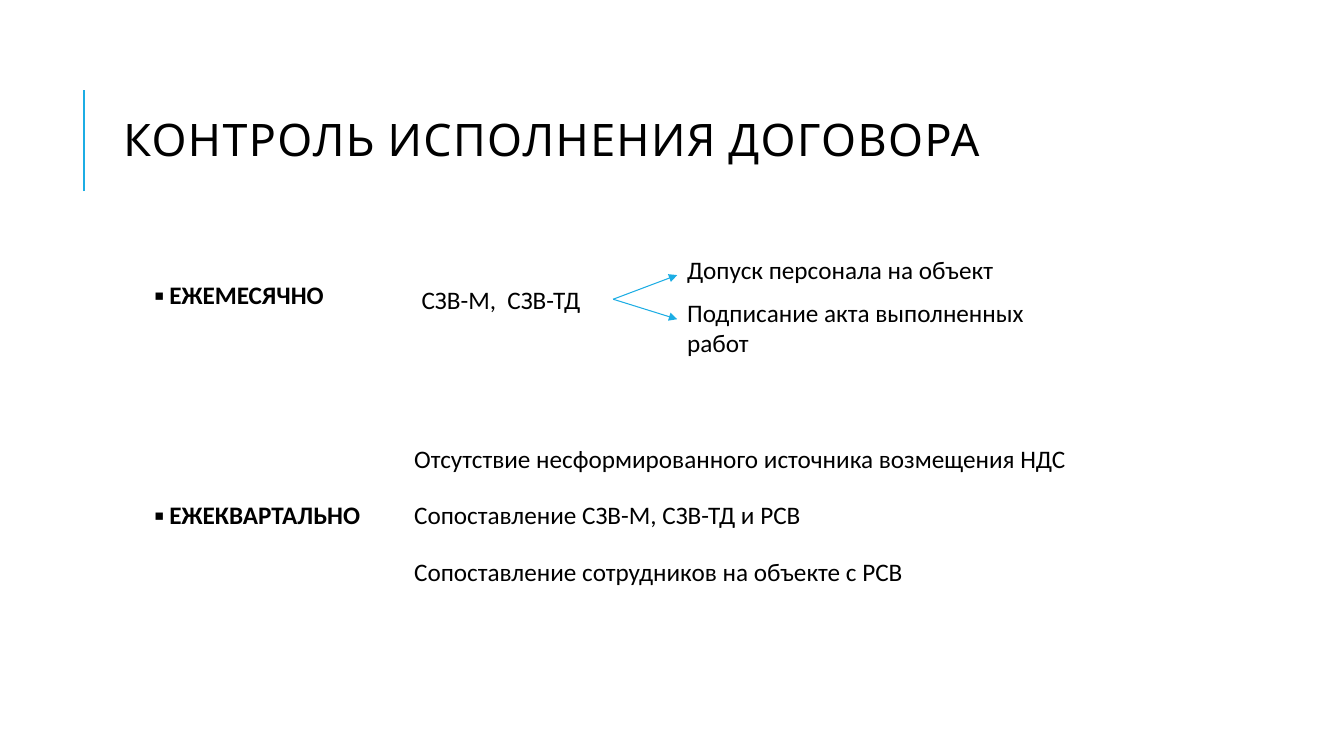
"""Build the slide on checking that a contract is carried out."""
import dataclasses

import lxml.etree
import pptx
import pptx.dml.color
import pptx.enum.shapes
import pptx.enum.text
import pptx.oxml.ns
import pptx.util

SCALE = 9525


@dataclasses.dataclass(frozen=True)
class Theme:
    """Hold colours, fonts and type sizes."""
    ink: str = "000000"
    accent: str = "1CADE4"
    paper: str = "FFFFFF"
    head_font: str = "Cabin"
    body_font: str = "Calibri"
    head_size: int = 32
    body_size: int = 18


THEME = Theme()


def px(count):
    """Turn pixels into EMU."""
    return pptx.util.Emu(count * SCALE)


def rgb(code):
    """Turn a hex code into a colour."""
    return pptx.dml.color.RGBColor.from_string(code)


def add_text(slide, text, left, top, width, height=38, bold=False):
    """Add a body text box and return it."""
    box = slide.shapes.add_textbox(px(left), px(top), px(width), px(height))
    frame = box.text_frame
    frame.word_wrap = True
    frame.text = text
    font = frame.paragraphs[0].runs[0].font
    font.name = THEME.body_font
    font.size = pptx.util.Pt(THEME.body_size)
    font.bold = bold
    font.color.rgb = rgb(THEME.ink)
    return box


def add_title(slide, text, left, top, width, height):
    """Add the spaced title in the head font."""
    frame = add_text(slide, text, left, top, width, height).text_frame
    frame.vertical_anchor = pptx.enum.text.MSO_ANCHOR.MIDDLE
    line = frame.paragraphs[0]
    line.line_spacing = 0.8
    font = line.runs[0].font
    font.name = THEME.head_font
    font.size = pptx.util.Pt(THEME.head_size)
    line.runs[0]._r.get_or_add_rPr().set("spc", "100")


def add_line(slide, start, end, weight, arrow=False):
    """Add a straight line, with an arrowhead at its end if asked."""
    line = slide.shapes.add_connector(
        pptx.enum.shapes.MSO_CONNECTOR.STRAIGHT,
        px(start[0]), px(start[1]), px(end[0]), px(end[1]))
    line.line.color.rgb = rgb(THEME.accent)
    line.line.width = pptx.util.Pt(weight)
    name = pptx.oxml.ns.qn
    if arrow:
        stroke = line.line._get_or_add_ln()
        lxml.etree.SubElement(stroke, name("a:tailEnd"), type="triangle")
    lxml.etree.SubElement(line._element.spPr, name("a:effectLst"))
    return line


def add_month(slide):
    """Add the monthly checks with arrows to their results."""
    add_text(slide, "▪ ЕЖЕМЕСЯЧНО", 138, 261, 234, bold=True)
    add_text(slide, "СЗВ-М,  СЗВ-ТД", 392, 266, 180)
    add_text(slide, "Допуск персонала на объект", 645, 237, 385)
    add_text(slide, "Подписание акта выполненных работ", 645, 278, 385, 68)
    for level in (262, 304):
        add_line(slide, (584, 285), (645, level), 0.75, arrow=True)


def add_quarter(slide):
    """Add the quarterly checks in evenly spaced rows."""
    add_text(slide, "▪ ЕЖЕКВАРТАЛЬНО", 138, 471, 234, bold=True)
    checks = (
        ("Отсутствие несформированного источника возмещения НДС", 660),
        ("Сопоставление СЗВ-М, СЗВ-ТД и РСВ", 446),
        ("Сопоставление сотрудников на объекте с РСВ", 667),
    )
    for row, (text, width) in enumerate(checks):
        add_text(slide, text, 385, 417 + 54 * row, width)


def main():
    """Build and save the deck."""
    deck = pptx.Presentation()
    deck.slide_width, deck.slide_height = px(1280), px(720)
    slide = deck.slides.add_slide(deck.slide_layouts[6])
    slide.background.fill.solid()
    slide.background.fill.fore_color.rgb = rgb(THEME.paper)
    add_line(slide, (80, 182), (80, 86), 1.5)
    add_title(slide, "КОНТРОЛЬ ИСПОЛНЕНИЯ ДОГОВОРА", 108, 114, 899, 45)
    add_month(slide)
    add_quarter(slide)
    deck.save("out.pptx")


if __name__ == "__main__":
    main()
